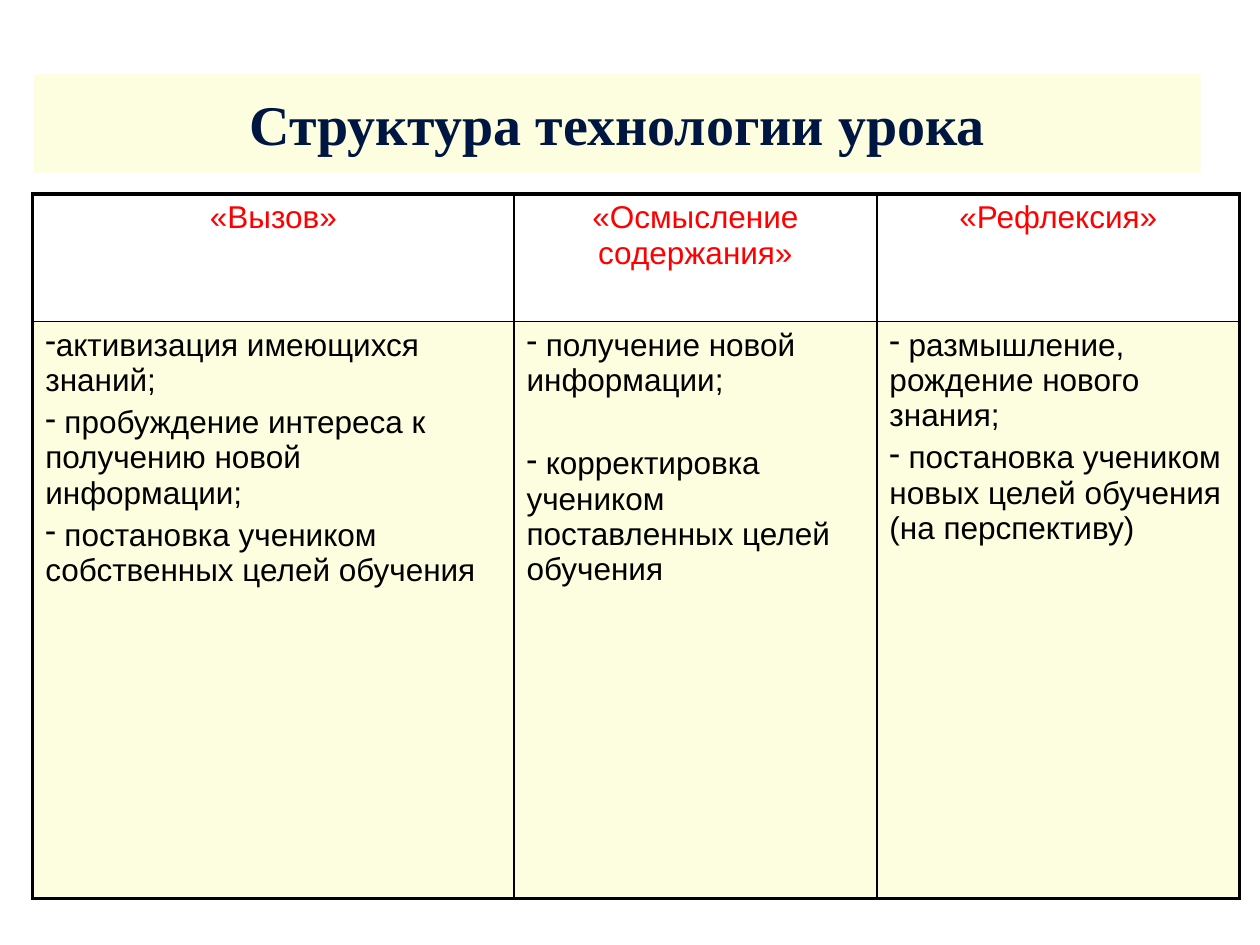
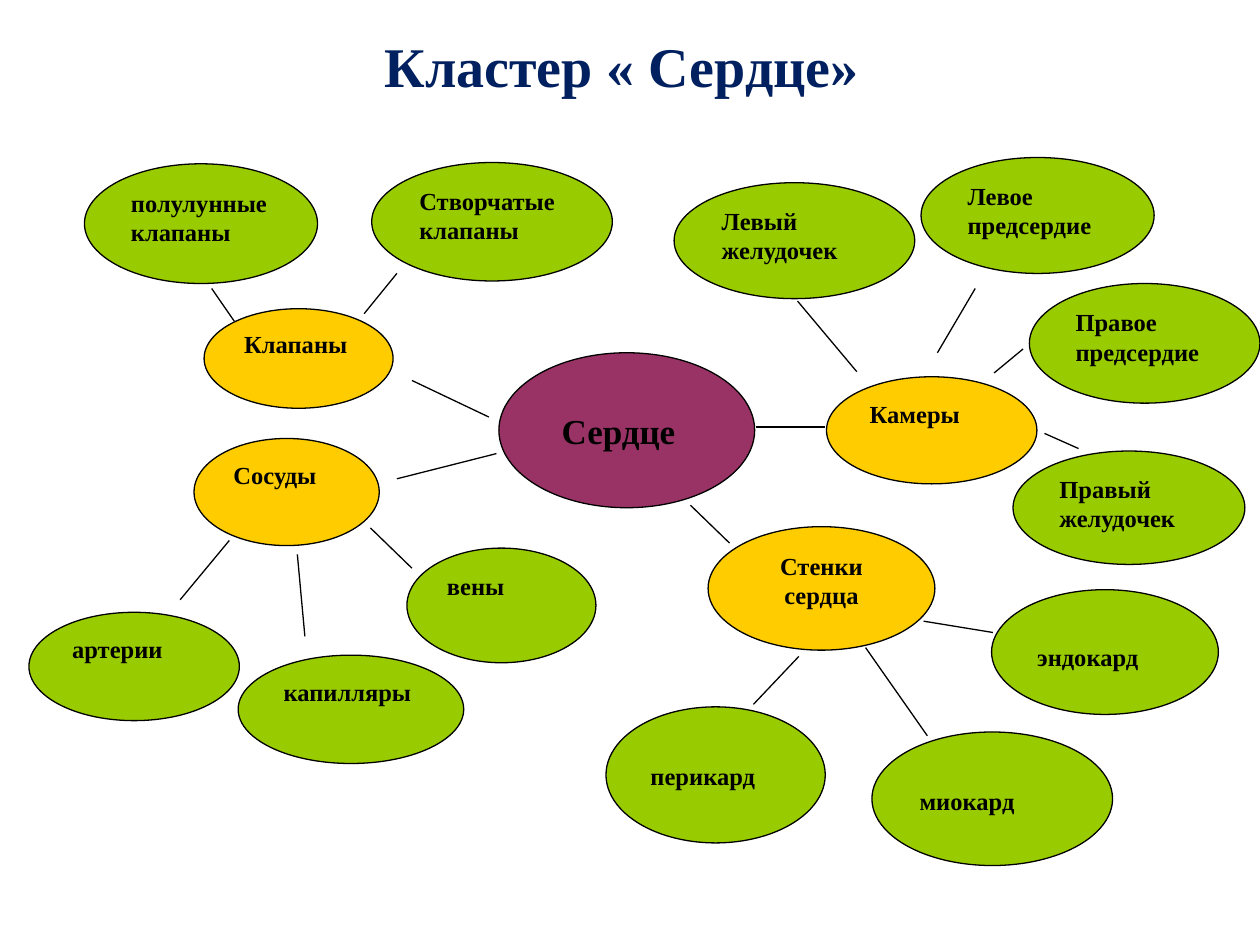
from lxml.etree import SubElement
from pptx import Presentation
from pptx.dml.color import RGBColor
from pptx.enum.shapes import MSO_CONNECTOR as Connector, MSO_SHAPE as Shape
from pptx.enum.text import MSO_ANCHOR as Anchor, PP_ALIGN as Align
from pptx.oxml.ns import qn
from pptx.util import Inches, Pt

BLACK, WHITE, RED = "000000", "FFFFFF", "FF0000"
CREAM, PLUM, GOLD, GREEN = "FDFDDF", "993366", "FFCC00", "99CC00"
SERIF, SANS = "Times New Roman", "Arial"
TITLE = dict(size=32, bold=True, font=SERIF, align=Align.CENTER)
OUTER, INNER = 2.25, 1


def color(value):
    return RGBColor.from_string(value)


def write(frame, *lines, size=14, font=SERIF, ink=BLACK, bold=False,
          align=Align.LEFT, anchor=Anchor.TOP, before=0, bullet=None):
    """Fill a text frame with one paragraph per line."""
    frame.word_wrap = True
    frame.vertical_anchor = anchor
    for number, line in enumerate(lines):
        para = frame.add_paragraph() if number else frame.paragraphs[0]
        para.alignment = align
        para.space_before = Pt(before)
        if bullet:
            SubElement(para._p.get_or_add_pPr(), qn("a:buChar"), char=bullet)
        span = para.add_run()
        span.text = line
        span.font.size, span.font.name, span.font.bold = Pt(size), font, bold
        span.font.color.rgb = color(ink)


deck = Presentation()
deck.slide_width, deck.slide_height = Inches(10), Inches(7.5)
blank = deck.slide_layouts[6]

# Slide 1: lesson structure
page = deck.slides.add_slide(blank)
band = page.shapes.add_shape(Shape.RECTANGLE, Inches(0.27), Inches(0.59), Inches(9.26), Inches(0.78))
band.shadow.inherit = False
band.fill.solid()
band.fill.fore_color.rgb = color(CREAM)
band.line.fill.background()
write(band.text_frame, "Структура технологии урока", ink="001642", anchor=Anchor.MIDDLE, **TITLE)

stages = [
    ("«Вызов»", 3.82, 4,
     ["активизация имеющихся знаний;",
      " пробуждение интереса к получению новой информации;",
      " постановка учеником собственных целей обучения"]),
    ("«Осмысление содержания»", 2.88, 27.5,
     [" получение новой информации;",
      " корректировка учеником поставленных целей обучения"]),
    ("«Рефлексия»", 2.88, 4,
     [" размышление, рождение нового знания;",
      " постановка учеником новых целей обучения (на перспективу)"]),
]
table = page.shapes.add_table(2, len(stages), Inches(0.26), Inches(1.54), Inches(9.58), Inches(5.59)).table
table.rows[0].height, table.rows[1].height = Inches(1.01), Inches(4.58)
last = len(stages) - 1
for column, (heading, width, gap, points) in enumerate(stages):
    table.columns[column].width = Inches(width)
    for row, fill in enumerate([WHITE, CREAM]):
        cell = table.cell(row, column)
        edges = {"L": column == 0, "R": column == last, "T": row == 0, "B": row == 1}
        for side, is_outer in edges.items():
            border = SubElement(cell._tc.get_or_add_tcPr(), qn("a:ln" + side),
                                w=str(Pt(OUTER if is_outer else INNER)))
            SubElement(SubElement(border, qn("a:solidFill")), qn("a:srgbClr"), val=BLACK)
        cell.fill.solid()
        cell.fill.fore_color.rgb = color(fill)
    write(table.cell(0, column).text_frame, heading, size=18, font=SANS, ink=RED,
          align=Align.CENTER)
    write(table.cell(1, column).text_frame, *points, size=18, font=SANS,
          before=gap, bullet="-")

# Slide 2: heart cluster
page = deck.slides.add_slide(blank)
title = page.shapes.add_textbox(Inches(1.48), Inches(0.22), Inches(6.91), Inches(0.61))
write(title.text_frame, "Кластер « Сердце»", ink="002060", anchor=Anchor.BOTTOM, **TITLE)

# Text, left, top, width, height, fill
bubbles = [
    ("Сердце", 3.96, 2.8, 2.03, 1.23, PLUM),
    ("Камеры", 6.56, 2.99, 1.67, 0.85, GOLD),
    ("Клапаны", 1.62, 2.45, 1.5, 0.79, GOLD),
    ("Сосуды", 1.54, 3.48, 1.47, 0.85, GOLD),
    ("Стенки сердца", 5.62, 4.18, 1.8, 0.98, GOLD),
    ("артерии", 0.23, 4.86, 1.67, 0.86, GREEN),
    ("капилляры", 1.89, 5.2, 1.79, 0.86, GREEN),
    ("вены", 3.23, 4.35, 1.5, 0.91, GREEN),
    ("полулунные клапаны", 0.67, 1.3, 1.85, 0.95, GREEN),
    ("Створчатые клапаны", 2.95, 1.29, 1.91, 0.94, GREEN),
    ("Левый желудочек", 5.35, 1.45, 1.91, 0.92, GREEN),
    ("Левое предсердие", 7.31, 1.25, 1.85, 0.92, GREEN),
    ("Правое предсердие", 8.17, 2.25, 1.83, 0.95, GREEN),
    ("Правый желудочек", 8.04, 3.58, 1.84, 0.9, GREEN),
    ("перикард", 4.81, 5.61, 1.74, 1.08, GREEN),
    ("миокард", 6.92, 5.81, 1.91, 1.06, GREEN),
    ("эндокард", 7.87, 4.68, 1.8, 0.99, GREEN),
]
lowered = {"Сердце", "перикард", "миокард", "эндокард"}
for text, left, top, width, height, fill in bubbles:
    bubble = page.shapes.add_shape(Shape.OVAL, Inches(left), Inches(top), Inches(width), Inches(height))
    bubble.shadow.inherit = False
    bubble.fill.solid()
    bubble.fill.fore_color.rgb = color(fill)
    bubble.line.color.rgb = color(BLACK)
    bubble.line.width = Pt(0.75)
    is_center = fill == PLUM
    frame = bubble.text_frame
    frame.margin_top = Inches(0.27 if text in lowered else 0.05)
    frame.margin_left = Inches(0.2 if is_center else 0.1)
    write(frame, text, size=20 if is_center else 14, bold=True,
          align=Align.CENTER if text == "Стенки сердца" else Align.LEFT)

# Start x, y and end x, y
links = [
    (3.88, 3.31, 3.27, 3.02), (3.94, 3.6, 3.15, 3.8),
    (6, 3.39, 6.55, 3.39), (5.48, 4.01, 5.79, 4.31),
    (2.36, 4.4, 2.42, 5.05), (1.82, 4.29, 1.43, 4.76), (2.94, 4.19, 3.27, 4.51),
    (1.68, 2.29, 1.86, 2.55), (3.15, 2.17, 2.89, 2.49),
    (6.8, 2.95, 6.33, 2.39), (7.44, 2.8, 7.74, 2.29),
    (8.12, 2.77, 7.89, 2.96), (8.29, 3.44, 8.56, 3.56),
    (6.34, 5.21, 5.98, 5.59), (6.87, 5.14, 7.36, 5.84), (7.33, 4.93, 7.88, 5.02),
]
for ends in links:
    link = page.shapes.add_connector(Connector.STRAIGHT, *[Inches(end) for end in ends])
    link.line.color.rgb = color(BLACK)
    link.line.width = Pt(0.75)
    SubElement(link._element.spPr, qn("a:effectLst"))

deck.save("out.pptx")
